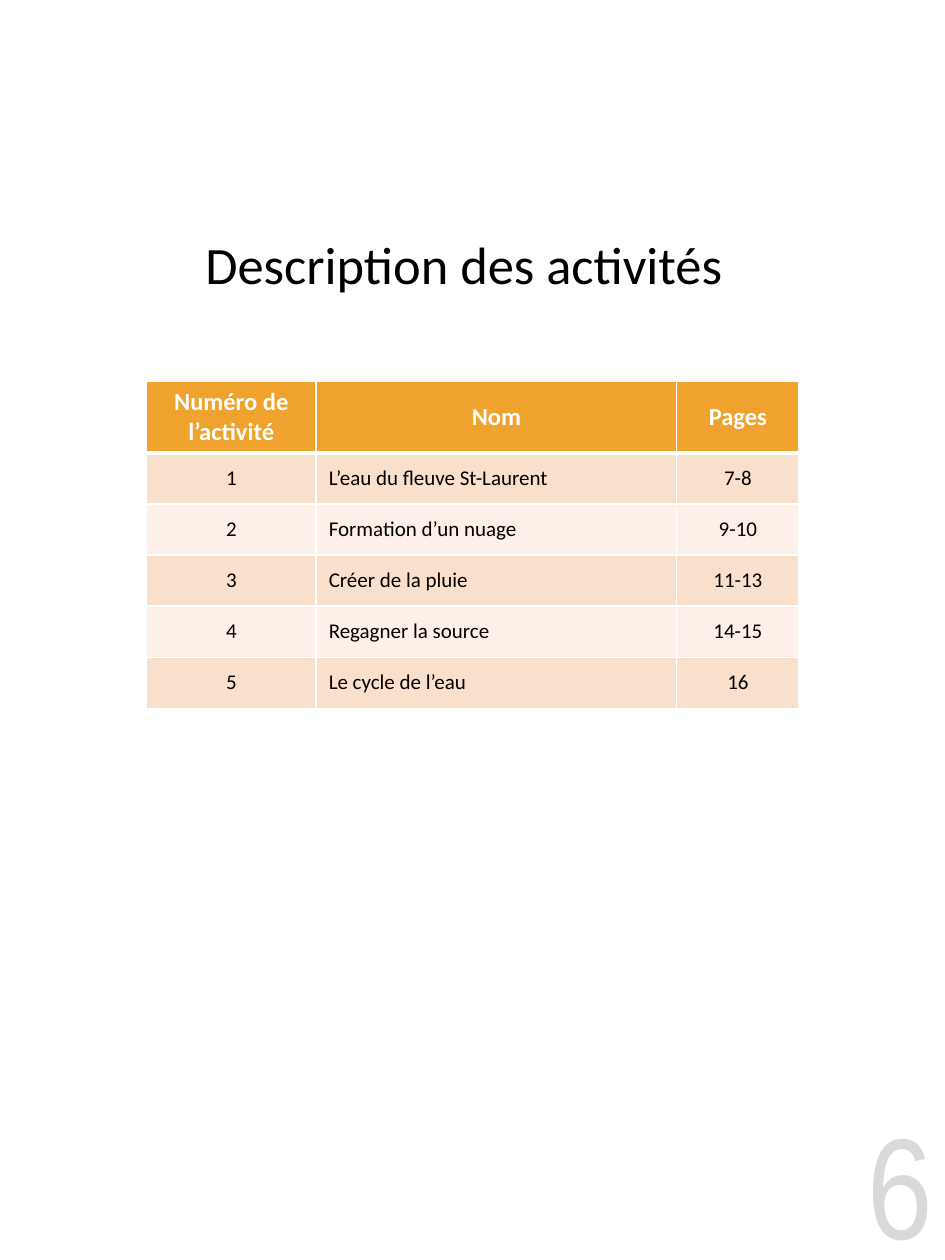
from dataclasses import dataclass

from lxml.etree import SubElement
from pptx import Presentation
from pptx.dml.color import RGBColor
from pptx.enum.text import MSO_ANCHOR, PP_ALIGN
from pptx.oxml.ns import qn
from pptx.slide import Slide
from pptx.table import _Cell
from pptx.text.text import TextFrame
from pptx.util import Pt

COLORS = {
    "black": "000000",
    "white": "FFFFFF",
    "page_number": "D9D9D9",
    "header": "F0A22E",
    "odd_row": "F9E0CD",
    "even_row": "FCF0E8",
}


@dataclass(frozen=True)
class TextStyle:
    """Look of a block of text."""

    size: float
    color: str
    align: PP_ALIGN
    font: str = "Calibri"
    bold: bool = False


@dataclass(frozen=True)
class Label:
    """Text box with its position in points."""

    text: str
    left: float
    top: float
    width: float
    height: float
    style: TextStyle


@dataclass(frozen=True)
class Activity:
    """Row of the activity table."""

    number: str
    name: str
    pages: str


LABELS = [
    Label("6", 452.2, 630.7, 87.8, 89.3,
          TextStyle(82, "page_number", PP_ALIGN.RIGHT, "Arial Narrow")),
    Label("Description des activités ", 29.5, 116.6, 478.1, 68.4,
          TextStyle(30, "black", PP_ALIGN.CENTER)),
]
HEADER = Activity("Numéro de\nl’activité", "Nom", "Pages")
ACTIVITIES = [
    Activity("1", "L’eau du fleuve St-Laurent", "7-8"),
    Activity("2", "Formation d’un nuage", "9-10"),
    Activity("3", "Créer de la pluie", "11-13"),
    Activity("4", "Regagner la source", "14-15"),
    Activity("5", "Le cycle de l’eau", "16"),
]
COLUMN_WIDTHS = [97, 206, 70]
HEADER_HEIGHT = 41
ROW_HEIGHT = 29.2
HEADER_STYLE = TextStyle(14, "white", PP_ALIGN.CENTER, bold=True)
CENTERED_STYLE = TextStyle(12, "black", PP_ALIGN.CENTER)
NAME_STYLE = TextStyle(12, "black", PP_ALIGN.LEFT)


def rgb(name: str) -> RGBColor:
    """Return a named colour."""
    return RGBColor.from_string(COLORS[name])


def write_text(frame: TextFrame, text: str, style: TextStyle) -> None:
    """Fill a text frame and format its runs."""
    frame.text = text
    frame.word_wrap = True
    for para in frame.paragraphs:
        para.alignment = style.align
        for span in para.runs:
            span.font.name = style.font
            span.font.size = Pt(style.size)
            span.font.bold = style.bold
            span.font.color.rgb = rgb(style.color)


def draw_label(page: Slide, label: Label) -> None:
    """Draw a vertically centred text box."""
    box = page.shapes.add_textbox(
        Pt(label.left), Pt(label.top), Pt(label.width), Pt(label.height))
    write_text(box.text_frame, label.text, label.style)
    box.text_frame.vertical_anchor = MSO_ANCHOR.MIDDLE


def set_border(cell: _Cell, side: str, width: float) -> None:
    """Give one side of a cell a white line."""
    properties = cell._tc.get_or_add_tcPr()
    line = SubElement(properties, qn(f"a:{side}"), w=str(Pt(width)))
    fill = SubElement(line, qn("a:solidFill"))
    SubElement(fill, qn("a:srgbClr"), val=COLORS["white"])


def draw_cell(cell: _Cell, text: str, style: TextStyle, fill: str,
              top: float, bottom: float) -> None:
    """Write, border and fill a table cell."""
    write_text(cell.text_frame, text, style)
    cell.vertical_anchor = MSO_ANCHOR.MIDDLE
    for side, width in {"lnL": 1, "lnR": 1, "lnT": top, "lnB": bottom}.items():
        set_border(cell, side, width)
    cell.fill.solid()
    cell.fill.fore_color.rgb = rgb(fill)


def draw_activities(page: Slide, left: float, top: float) -> None:
    """Draw the table of activities."""
    rows = [HEADER, *ACTIVITIES]
    height = HEADER_HEIGHT + ROW_HEIGHT * len(ACTIVITIES)
    table = page.shapes.add_table(
        len(rows), len(COLUMN_WIDTHS), Pt(left), Pt(top),
        Pt(sum(COLUMN_WIDTHS)), Pt(height)).table
    for column, width in zip(table.columns, COLUMN_WIDTHS):
        column.width = Pt(width)
    for index, activity in enumerate(rows):
        is_header = index == 0
        table.rows[index].height = Pt(HEADER_HEIGHT if is_header else ROW_HEIGHT)
        fill = "header" if is_header else ("odd_row" if index % 2 else "even_row")
        styles = ([HEADER_STYLE] * 3 if is_header
                  else [CENTERED_STYLE, NAME_STYLE, CENTERED_STYLE])
        texts = [activity.number, activity.name, activity.pages]
        for column, (text, style) in enumerate(zip(texts, styles)):
            draw_cell(table.cell(index, column), text, style, fill,
                      top=3 if index == 1 else 1, bottom=3 if is_header else 1)


def main() -> None:
    """Build and save the slide."""
    deck = Presentation()
    deck.slide_width, deck.slide_height = Pt(540), Pt(720)
    page = deck.slides.add_slide(deck.slide_layouts[6])
    for label in LABELS:
        draw_label(page, label)
    draw_activities(page, left=83.7, top=217.8)
    deck.save("out.pptx")


if __name__ == "__main__":
    main()
